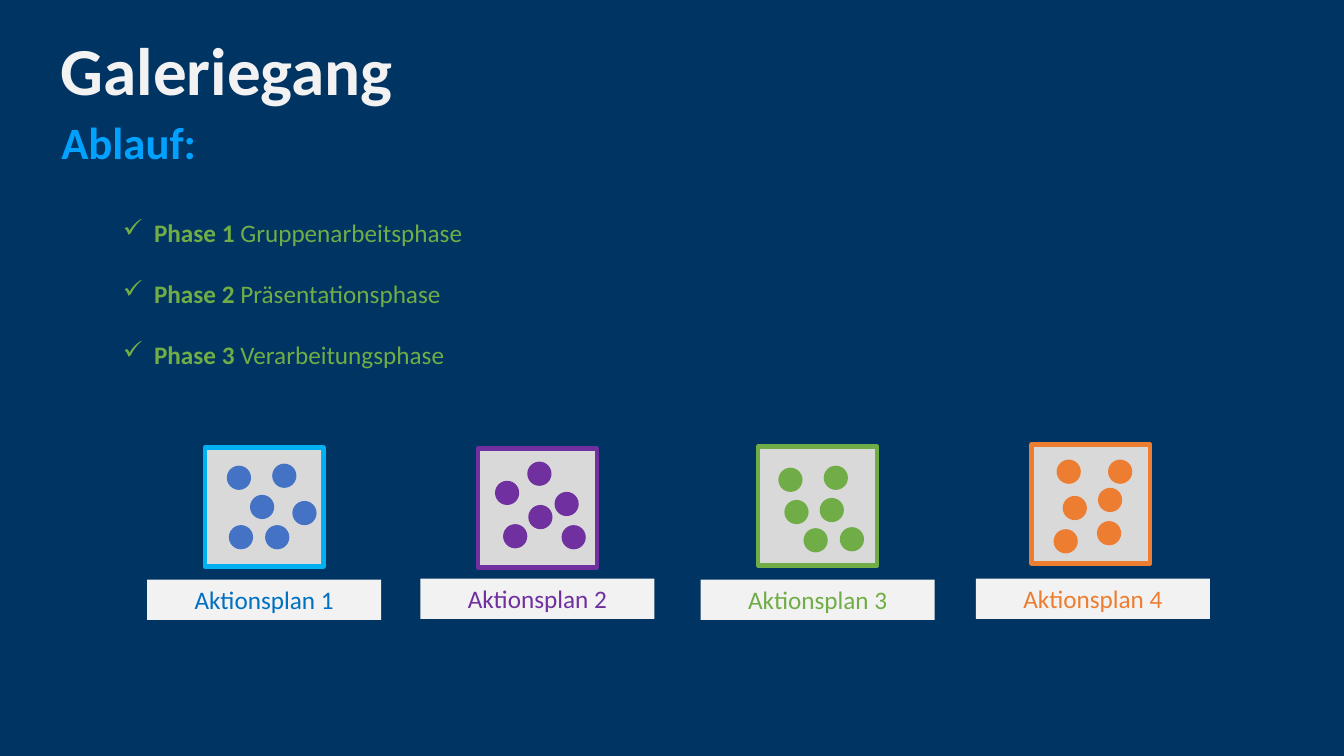
from lxml import etree
from pptx import Presentation
from pptx.dml.color import RGBColor
from pptx.enum import shapes, text
from pptx.oxml import ns
from pptx.util import Inches, Pt

FONT = "Calibri"
COLORS = {
    "back": "003462", "pale": "F2F2F2", "sky": "01A2FF", "board": "D9D9D9",
    "cyan": "00B0F0", "blue": "4472C4", "navy": "0070C0",
    "purple": "7030A0", "green": "70AD47", "orange": "ED7D31",
}
PHASES = ["Gruppenarbeitsphase", "Präsentationsphase", "Verarbeitungsphase"]
SIDE, DOT = 1.18, 0.24

# Board corner, label corner, colours of frame, dots and label, dot corners
PLANS = [
    ((2.03, 4.44), (1.46, 5.75), ("cyan", "blue", "navy"),
     [(2.7, 4.6), (2.9, 4.97), (2.25, 4.62), (2.48, 4.91), (2.27, 5.21), (2.63, 5.21)]),
    ((4.74, 4.45), (4.17, 5.74), ("purple",) * 3,
     [(5.23, 4.58), (5.57, 5.21), (4.91, 4.77), (5.24, 5.01), (4.99, 5.2), (5.5, 4.88)]),
    ((7.52, 4.43), (6.95, 5.75), ("green",) * 3,
     [(8.17, 4.62), (8.33, 5.23), (7.72, 4.64), (8.13, 4.94), (7.97, 5.24), (7.78, 4.96)]),
    ((10.23, 4.41), (9.68, 5.74), ("orange",) * 3,
     [(10.48, 4.56), (10.54, 4.92), (10.99, 4.56), (10.89, 4.84), (10.88, 5.17), (10.45, 5.25)]),
]


def color(name):
    return RGBColor.from_string(COLORS[name])


def style(para, size, name, bold=None):
    font = para.font
    font.name, font.size, font.bold = FONT, Pt(size), bold
    font.color.rgb = color(name)


def add_title(slide):
    title = slide.shapes.title
    title.left, title.top = Inches(0.23), Inches(-0.16)
    title.width, title.height = Inches(4.04), Inches(1.3)
    frame = title.text_frame
    frame.text = "Galeriegang"
    frame.auto_size = text.MSO_AUTO_SIZE.NONE
    frame.vertical_anchor = text.MSO_ANCHOR.BOTTOM
    para = frame.paragraphs[0]
    para.alignment = text.PP_ALIGN.CENTER
    para.line_spacing = 0.9
    style(para, 48, "pale", True)


def add_box(slide, *place):
    frame = slide.shapes.add_textbox(*map(Inches, place)).text_frame
    frame.word_wrap = True
    return frame


def add_heading(slide):
    para = add_box(slide, 0.51, 1.19, 2.73, 0.57).paragraphs[0]
    para.text = "Ablauf:"
    para.line_spacing = 0.8
    style(para, 32, "sky", True)


def add_check(para):
    """Give the paragraph a hanging check mark as its bullet."""
    props = para._p.get_or_add_pPr()
    props.set("marL", str(Inches(0.81)))
    props.set("indent", str(Inches(-0.31)))
    etree.SubElement(props, ns.qn("a:buChar")).set("char", "✓")


def add_phases(slide):
    frame = add_box(slide, 0.62, 2.11, 11.92, 1.62)
    for num, phase in enumerate(PHASES, 1):
        para = frame.paragraphs[0] if num == 1 else frame.add_paragraph()
        para.space_after = Pt(22)
        add_check(para)
        style(para, 18, "green")
        head = para.add_run()
        head.text = f"Phase {num} "
        head.font.bold = True
        para.add_run().text = phase


def add_shape(group, kind, spot, size, fill, line=None):
    shape = group.shapes.add_shape(kind, *map(Inches, (*spot, *size)))
    shape.shadow.inherit = False
    shape.fill.solid()
    shape.fill.fore_color.rgb = color(fill)
    if line:
        shape.line.color.rgb = color(line)
        shape.line.width = Pt(3)
    else:
        shape.line.fill.background()
    return shape


def add_plan(slide, num, board, label, tones, dots):
    edge, dot, ink = tones
    kind = shapes.MSO_SHAPE
    group = slide.shapes.add_group_shape()
    add_shape(group, kind.RECTANGLE, board, (SIDE, SIDE), "board", edge)
    for spot in dots:
        add_shape(group, kind.OVAL, spot, (DOT, DOT), dot)
    plate = add_shape(group, kind.RECTANGLE, label, (2.32, 0.4), "pale")
    frame = plate.text_frame
    frame.vertical_anchor = text.MSO_ANCHOR.MIDDLE
    para = frame.paragraphs[0]
    para.text = f"Aktionsplan {num}"
    para.alignment = text.PP_ALIGN.CENTER
    style(para, 18, ink)


def main():
    deck = Presentation()
    deck.slide_width, deck.slide_height = Inches(13.33), Inches(7.5)
    slide = deck.slides.add_slide(deck.slide_layouts[5])
    slide.background.fill.solid()
    slide.background.fill.fore_color.rgb = color("back")
    add_title(slide)
    add_heading(slide)
    add_phases(slide)
    for num, plan in enumerate(PLANS, 1):
        add_plan(slide, num, *plan)
    deck.save("out.pptx")


if __name__ == "__main__":
    main()
